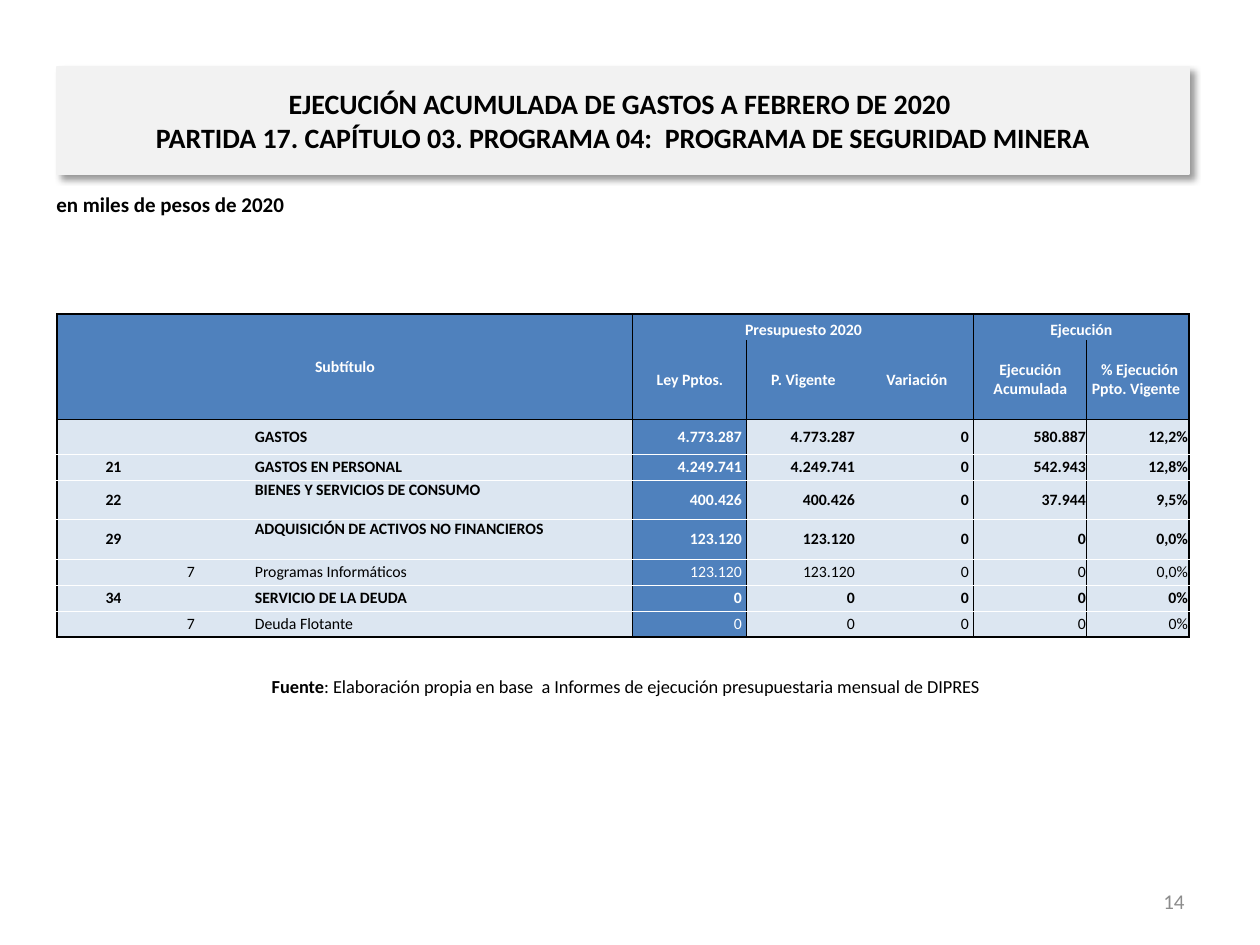
import lxml.etree
import pptx
import pptx.dml.color
import pptx.enum.shapes
import pptx.enum.text
import pptx.oxml.ns
import pptx.util

PX_PER_INCH = 126
FONT = "Calibri"
COLORS = {
    "black": "000000", "white": "FFFFFF", "header": "4F81BD",
    "body": "DCE6F1", "banner": "F2F2F2", "page": "8C8C8C",
}
ALIGN = pptx.enum.text.PP_ALIGN
ANCHOR = pptx.enum.text.MSO_ANCHOR
NO_GRID_STYLE = "{2D5ABB26-0587-4C30-8999-92F81FD0307C}"

COLUMN_WIDTHS = [113, 42, 42, 379, 114, 113, 114, 113, 102]
ROW_HEIGHTS = [26, 79, 35, 26, 39, 40, 26, 26, 26]
VERTICAL_RULES = {0: ("black", 1), 4: ("black", 0.5), 7: ("black", 0.5), 9: ("black", 1)}
HORIZONTAL_RULES = {
    0: ("black", 1), 2: ("black", 0.5), 9: ("black", 1),
    **{edge: ("white", 0.5) for edge in range(3, 9)},
}
HEADER_SPANS = [(0, 0, 1, 3), (0, 4, 0, 6), (0, 7, 0, 8)]
HEADER_ROWS = [
    ["Subtítulo", "", "", "", "Presupuesto 2020", "", "", "Ejecución", ""],
    ["", "", "", "", "Ley Pptos.", "P. Vigente", "Variación",
     "Ejecución Acumulada", " % Ejecución Ppto. Vigente "],
]
BUDGET_ROWS = [
    ["", "", "", "GASTOS", "4.773.287", "4.773.287", "0", "580.887", "12,2%"],
    ["21", "", "", "GASTOS EN PERSONAL", "4.249.741", "4.249.741", "0", "542.943", "12,8%"],
    ["22", "", "", "BIENES Y SERVICIOS DE CONSUMO", "400.426", "400.426", "0", "37.944", "9,5%"],
    ["29", "", "", "ADQUISICIÓN DE ACTIVOS NO FINANCIEROS", "123.120", "123.120", "0", "0", "0,0%"],
    ["", "7", "", "Programas Informáticos", "123.120", "123.120", "0", "0", "0,0%"],
    ["34", "", "", "SERVICIO DE LA DEUDA", "0", "0", "0", "0", "0%"],
    ["", "7", "", "Deuda Flotante", "0", "0", "0", "0", "0%"],
]


def px(length):
    """Turn pixels into EMU."""
    return pptx.util.Emu(round(length * 914400 / PX_PER_INCH))


def rgb(name):
    """Look up a named colour."""
    return pptx.dml.color.RGBColor.from_string(COLORS[name])


def add_element(parent, tag, **attributes):
    """Append a DrawingML element."""
    return lxml.etree.SubElement(parent, pptx.oxml.ns.qn(tag), **attributes)


def write_text(text_frame, lines, size=9, color="black", bold=False, align=ALIGN.LEFT):
    """Write one paragraph per line; a line is a string or a list of (text, bold) runs."""
    text_frame.word_wrap = True
    for index, line in enumerate(lines):
        paragraph = text_frame.add_paragraph() if index else text_frame.paragraphs[0]
        paragraph.alignment = align
        for text, run_bold in ([(line, bold)] if isinstance(line, str) else line):
            run = paragraph.add_run()
            run.text = text
            run.font.name = FONT
            run.font.size = pptx.util.Pt(size)
            run.font.bold = run_bold
            run.font.color.rgb = rgb(color)


def add_label(slide, box, lines, anchor=ANCHOR.MIDDLE, **text_format):
    """Add a text box."""
    shape = slide.shapes.add_textbox(*map(px, box))
    shape.text_frame.vertical_anchor = anchor
    write_text(shape.text_frame, lines, **text_format)


def add_banner(slide, box, lines):
    """Add the shadowed title panel."""
    shape = slide.shapes.add_shape(pptx.enum.shapes.MSO_SHAPE.RECTANGLE, *map(px, box))
    shape.fill.solid()
    shape.fill.fore_color.rgb = rgb("banner")
    shape.line.color.rgb = rgb("banner")
    shape.line.width = pptx.util.Pt(0.75)
    shape.shadow.inherit = False
    effects = shape.element.spPr.find(pptx.oxml.ns.qn("a:effectLst"))
    shadow = add_element(effects, "a:outerShdw", blurRad="50800", dist="38100",
                         dir="2700000", algn="tl", rotWithShape="0")
    shadow_color = add_element(shadow, "a:srgbClr", val=COLORS["black"])
    add_element(shadow_color, "a:alpha", val="40000")
    shape.text_frame.vertical_anchor = ANCHOR.MIDDLE
    write_text(shape.text_frame, lines, size=16, bold=True, align=ALIGN.CENTER)


def set_borders(cell, row, column):
    """Draw the table rules that run along the edges of a cell."""
    properties = cell._tc.get_or_add_tcPr()
    rules = {
        "a:lnL": VERTICAL_RULES.get(column),
        "a:lnR": VERTICAL_RULES.get(column + cell.span_width),
        "a:lnT": HORIZONTAL_RULES.get(row),
        "a:lnB": HORIZONTAL_RULES.get(row + cell.span_height),
    }
    for tag, rule in rules.items():
        if rule:
            color, width = rule
            line = add_element(properties, tag, w=str(pptx.util.Pt(width)))
            add_element(add_element(line, "a:solidFill"), "a:srgbClr", val=COLORS[color])


def format_cell(cell, row, column, text):
    """Fill, rule and write one table cell."""
    is_header = row < len(HEADER_ROWS)
    is_blue = is_header or column == 4
    set_borders(cell, row, column)
    cell.fill.solid()
    cell.fill.fore_color.rgb = rgb("header" if is_blue else "body")
    cell.margin_left = cell.margin_top = px(1)
    cell.margin_right = px(5 if not is_header and 4 <= column <= 6 else 1)
    cell.margin_bottom = 0
    cell.vertical_anchor = ANCHOR.MIDDLE
    if row == 0 and column >= 4:
        cell.vertical_anchor = ANCHOR.BOTTOM
    elif row in (4, 5) and column == 3:
        cell.vertical_anchor = ANCHOR.TOP
    if not text:
        add_element(cell.text_frame.paragraphs[0]._p, "a:endParaRPr", sz="900")
        return
    align = ALIGN.CENTER
    if not is_header and column >= 3:
        align = ALIGN.JUSTIFY if column == 3 else ALIGN.RIGHT
    write_text(cell.text_frame, [text], color="white" if is_blue else "black",
               bold=row not in (6, 8), align=align)


def add_budget_table(slide, box):
    """Add the budget table."""
    rows = HEADER_ROWS + BUDGET_ROWS
    table = slide.shapes.add_table(len(rows), len(COLUMN_WIDTHS), *map(px, box)).table
    table.first_row = table.horz_banding = False
    table._tbl.tblPr.find(pptx.oxml.ns.qn("a:tableStyleId")).text = NO_GRID_STYLE
    for column, width in zip(table.columns, COLUMN_WIDTHS):
        column.width = px(width)
    for row, height in zip(table.rows, ROW_HEIGHTS):
        row.height = px(height)
    for top, left, bottom, right in HEADER_SPANS:
        table.cell(top, left).merge(table.cell(bottom, right))
    for row, texts in enumerate(rows):
        for column, text in enumerate(texts):
            format_cell(table.cell(row, column), row, column, text)


def main():
    """Build and save the presentation."""
    presentation = pptx.Presentation()
    presentation.slide_width, presentation.slide_height = px(1260), px(945)
    slide = presentation.slides.add_slide(presentation.slide_layouts[6])
    add_label(slide, (64, 670, 1124, 33), [[
        ("Fuente", True),
        (": Elaboración propia en base  a Informes de ejecución presupuestaria mensual de DIPRES", False),
    ]], size=10.5, align=ALIGN.CENTER)
    add_label(slide, (903, 876, 294, 50), ["14"], size=12, color="page", align=ALIGN.RIGHT)
    add_label(slide, (44, 185, 944, 49), ["en miles de pesos de 2020"],
              anchor=ANCHOR.TOP, size=12, bold=True)
    add_banner(slide, (57, 67, 1132, 107), [
        "EJECUCIÓN ACUMULADA DE GASTOS A FEBRERO DE 2020 ",
        "PARTIDA 17. CAPÍTULO 03. PROGRAMA 04:  PROGRAMA DE SEGURIDAD MINERA",
    ])
    add_budget_table(slide, (57, 314, sum(COLUMN_WIDTHS), sum(ROW_HEIGHTS)))
    presentation.save("out.pptx")


if __name__ == "__main__":
    main()
